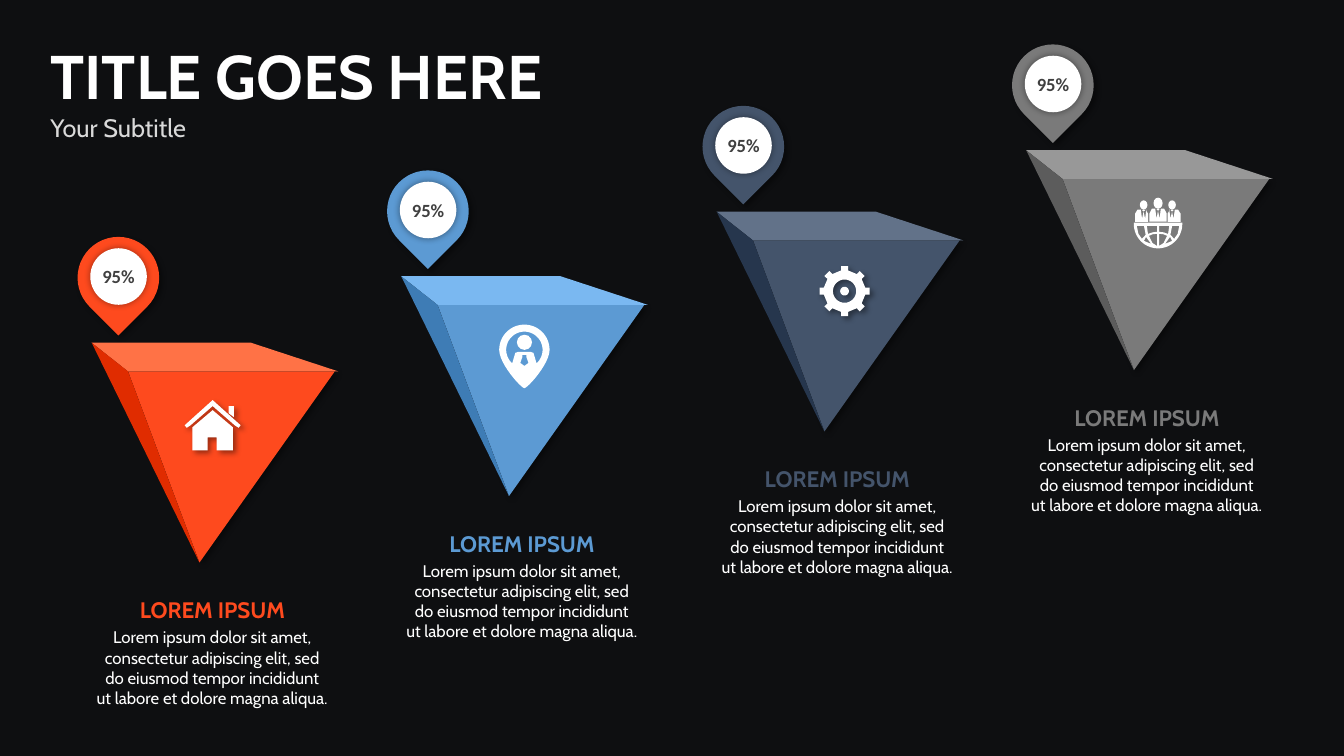
from math import cos, radians, sin

from lxml.etree import SubElement
from pptx import Presentation
from pptx.dml.color import RGBColor
from pptx.enum.shapes import MSO_SHAPE
from pptx.enum.text import MSO_ANCHOR, MSO_AUTO_SIZE, PP_ALIGN
from pptx.oxml.ns import qn
from pptx.util import Pt

HUES = {"back": "0E0F11", "white": "FFFFFF", "pale": "D9D9D9", "dark": "404040", "shade": "000000"}
# Left and top of each pyramid, then its front, top and side colours
STEPS = [
    (65.5, 244.8, "FE4A1E", "FF7246", "E02C00"),
    (286.6, 197.3, "5C9AD3", "7AB8F1", "3E7CB5"),
    (511.9, 151.2, "44546B", "627289", "26364D"),
    (733, 107.3, "7A7A7A", "989898", "5C5C5C"),
]
BODY = ("Lorem ipsum dolor sit amet, consectetur adipiscing elit, sed do eiusmod "
        "tempor incididunt ut labore et dolore magna aliqua.")
SOFT = (4, 3, 45)  # shadow blur, distance and angle
HALO = (5, 0, 0)


def arc(size, start, end, count=32, drop=0):
    turns = [radians(start + (end - start) * i / count) for i in range(count + 1)]
    return [(size * cos(t), size * sin(t) + drop) for t in turns]


def curve(a, b, c, d, count=12):
    steps = [i / count for i in range(count + 1)]
    return [tuple((1 - t) ** 3 * p + 3 * t * (1 - t) ** 2 * q + 3 * t * t * (1 - t) * r + t ** 3 * s
                  for p, q, r, s in zip(a, b, c, d)) for t in steps]


def flip(points):
    return [(-x, y) for x, y in points]


class Art:
    def __init__(self, slide):
        self.slide = slide
        self.into = slide.shapes
        self.x = self.y = 0

    def group(self):
        self.into = self.slide.shapes.add_group_shape().shapes

    def move(self, x, y):
        self.x, self.y = x, y

    def paint(self, shape, hue, shade=None):
        shape.fill.solid()
        shape.fill.fore_color.rgb = RGBColor.from_string(HUES.get(hue, hue))
        shape.line.fill.background()
        shape.shadow.inherit = False
        if shade:
            blur, dist, angle = shade
            effects = shape.element.spPr.find(qn("a:effectLst"))
            outer = SubElement(effects, qn("a:outerShdw"), blurRad=str(Pt(blur)), dist=str(Pt(dist)),
                               dir=str(angle * 60000), algn="ctr", rotWithShape="0")
            color = SubElement(outer, qn("a:srgbClr"), val=HUES["shade"])
            SubElement(color, qn("a:alpha"), val="40000")
        return shape

    def form(self, hue, *loops, shade=None):
        loops = [[(Pt(self.x + x), Pt(self.y + y)) for x, y in loop] for loop in loops]
        pen = self.into.build_freeform(*loops[0][0])
        for i, loop in enumerate(loops):
            if i:
                pen.move_to(*loop[0])
            pen.add_line_segments(loop[1:], close=True)
        return self.paint(pen.convert_to_shape(), hue, shade)

    def preset(self, kind, hue, x, y, wide, high, shade=None):
        shape = self.into.add_shape(kind, Pt(self.x + x), Pt(self.y + y), Pt(wide), Pt(high))
        return self.paint(shape, hue, shade)

    def oval(self, x, y, wide, high):
        """White oval around a centre."""
        self.preset(MSO_SHAPE.OVAL, "white", x - wide / 2, y - high / 2, wide, high)

    def words(self, frame, align, *lines, gap=0):
        frame.word_wrap = True
        frame.auto_size = MSO_AUTO_SIZE.NONE
        for i, (text, hue, style) in enumerate(lines):
            para = frame.add_paragraph() if i else frame.paragraphs[0]
            para.text = text
            para.alignment = align
            para.space_before = Pt(gap if i else 0)
            for key, value in style.items():
                setattr(para.font, key, value)
            para.font.color.rgb = RGBColor.from_string(HUES.get(hue, hue))

    def title(self, *lines):
        shape = self.slide.shapes.title
        place = {"left": 28.8, "top": 23.8, "width": 468, "height": 82}
        for key, value in place.items():
            setattr(shape, key, Pt(value))
        shape.text_frame.vertical_anchor = MSO_ANCHOR.TOP
        self.words(shape.text_frame, PP_ALIGN.LEFT, *lines)

    def label(self, x, y, wide, high, *lines):
        box = self.slide.shapes.add_textbox(Pt(self.x + x), Pt(self.y + y), Pt(wide), Pt(high))
        self.words(box.text_frame, PP_ALIGN.CENTER, *lines, gap=2.9)

    def solid(self, front, top, side):
        self.group()
        near, right, tip = (26, 20.5), (173.6, 20.5), (77, 157)
        self.form(front, [near, right, tip], shade=SOFT)
        self.form(top, [(0, 0), (113.8, 0), (176.2, 20.5), right, near])
        self.form(side, [(0, 0), near, tip])

    def pin(self, hue, text):
        self.group()
        drop = self.preset(MSO_SHAPE.TEAR, hue, -10.1, -75.6, 58.3, 58.3, SOFT)
        drop.rotation = 135
        disc = self.preset(MSO_SHAPE.OVAL, "white", -1, -67.5, 40.4, 40.4, HALO)
        frame = disc.text_frame
        for side in ("left", "top", "right", "bottom"):
            setattr(frame, "margin_" + side, 0)
        frame.vertical_anchor = MSO_ANCHOR.MIDDLE
        self.words(frame, PP_ALIGN.CENTER, (text, "dark", {"name": "Calibri", "size": Pt(13.3), "bold": True}))

    def house(self):
        body = [(0, 7.2), (14.4, 19.4), (14.4, 36), (2.9, 36), (2.9, 26.6),
                (-3.6, 26.6), (-3.6, 36), (-14.4, 36), (-14.4, 19.4)]
        stack = [(11.5, 4.3), (15.1, 4.3), (15.1, 12.2), (11.5, 9.4)]
        roof = [(0, 0), (20, 18), (18.5, 19.8), (15.8, 18), (0, 4.3)]
        self.form("white", body, stack, roof + flip(roof[-2:0:-1]), shade=SOFT)

    def user(self):
        side = curve((18, 0), (18, 10.1), (2.2, 27.4), (0, 27.4))
        rim = arc(18, 180, 360) + side + flip(side[::-1])
        coat = [(8.6, 9.4), (6.5, 2.2), (4.3, 1.4)]
        hole = arc(13, 135, 405) + coat + flip(coat[::-1])
        tie = [(-1.4, 3.6), (1.4, 3.6), (1.4, 5), (2.9, 9.4), (0, 11.5), (-2.9, 9.4), (-1.4, 5)]
        self.form("white", rim, hole, tie)
        self.oval(0, -5.4, 10.8, 10.8)

    def gear(self):
        rim = []
        for turn in range(0, 360, 45):
            for size, shift in ((15, -9.5), (18, -8), (18, 8), (15, 9.5)):
                rim += arc(size, turn + shift, turn + shift, 1)[:1]
        self.form("white", rim, arc(8.3, 0, 360), arc(3.1, 0, 360), shade=SOFT)

    def team(self):
        # Half globe with its cut-out panes
        panes = [
            [(0.7, 2.2), (8, 2.2), (7.2, 8), (4, 6.9), (0.7, 6.5)],
            [(10.1, 2.2), (15.2, 2.2), (14, 8), (11.5, 11.5), (8.8, 8.6)],
            [(5, 15.1), (8.6, 10.1), (10.1, 13)],
            [(0.7, 7.9), (4, 8.3), (6.5, 9.4), (4, 14.5), (0.7, 16.6)],
        ]
        globe = [(-17.3, 0), (17.3, 0)] + arc(17.3, 0, 180, drop=1)
        self.form("white", globe, *panes, *[flip(pane) for pane in panes])
        # Three people: centre, left and right reach, top, head width and height
        for x, left, right, top, wide, high in (
                (0, 6.2, 6.2, -10, 6.5, 7.9), (10, 3.2, 6.1, -9.4, 5.4, 6.6), (-10.3, 6.1, 3.2, -9.4, 5.4, 6.6)):
            coat = [(-left, -0.7), (-left, -6.5), (1.8 - left, top), (-2, top), (-1.1, -2.9), (0, top + 1.5),
                    (1.1, -2.9), (2, top), (right - 1.8, top), (right, -6.5), (right, -0.7)]
            knot = [(-1, top + 0.6), (-0.5, top), (0.5, top), (1, top + 0.6), (0, top + 1.4)]
            for part in (coat, knot):
                self.form("white", [(x + px, y) for px, y in part])
            self.oval(x, top - high / 2, wide, high)


def main():
    deck = Presentation()
    deck.slide_width, deck.slide_height = Pt(960), Pt(540)
    slide = deck.slides.add_slide(deck.slide_layouts[5])
    slide.background.fill.solid()
    slide.background.fill.fore_color.rgb = RGBColor.from_string(HUES["back"])
    art = Art(slide)

    # Heading
    bold = {"name": "Cabin", "bold": True}
    plain = {"name": "Cabin", "bold": False}
    art.title(("TITLE GOES HERE", "white", {**bold, "size": Pt(44)}),
              ("Your Subtitle", "pale", {**plain, "size": Pt(18)}))

    # Rising steps: pyramid, pin, caption and icon
    icons = [(art.house, 86.4, 41), (art.user, 88, 52.6), (art.gear, 91.4, 56.8), (art.team, 94.2, 51.8)]
    for (x, y, front, top, side), (icon, dx, dy) in zip(STEPS, icons):
        art.move(x, y)
        art.solid(front, top, side)
        art.pin(front, "95%")
        art.label(-3.8, 177.5, 180, 102, ("LOREM IPSUM", front, {**bold, "size": Pt(16)}),
                  (BODY, "white", {**plain, "size": Pt(12)}))
        art.group()
        art.move(x + dx, y + dy)
        icon()

    deck.save("out.pptx")


if __name__ == "__main__":
    main()
